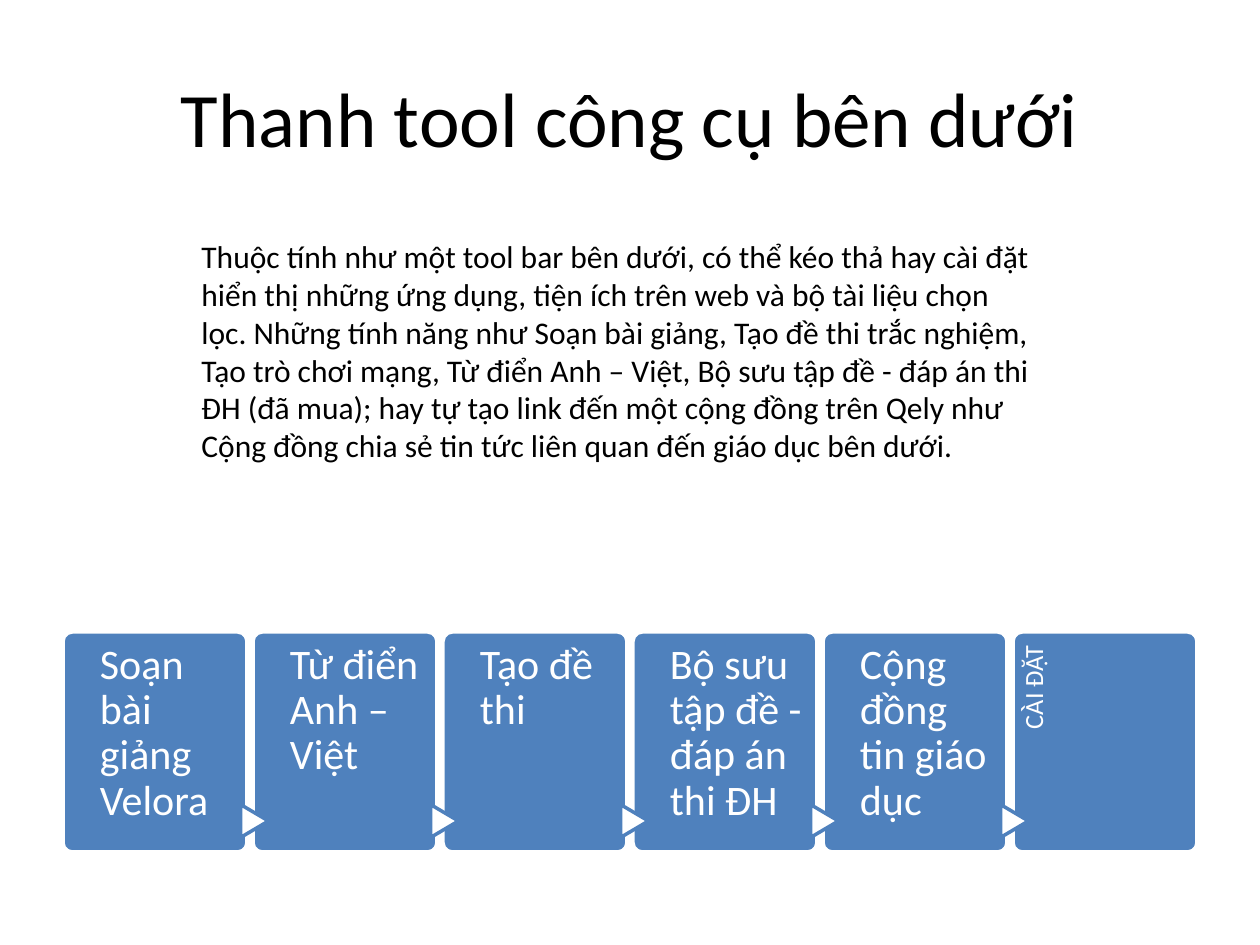
from dataclasses import dataclass

from pptx import Presentation
from pptx.dml.color import RGBColor as RGB
from pptx.enum.shapes import MSO_SHAPE as SHAPE
from pptx.enum.text import MSO_ANCHOR as ANCHOR, MSO_AUTO_SIZE as FIT, PP_ALIGN as ALIGN
from pptx.util import Pt


@dataclass(frozen=True)
class Theme:
    font: str = "Calibri"
    ink: RGB = RGB(0, 0, 0)
    paper: RGB = RGB(255, 255, 255)
    blue: RGB = RGB(0x4F, 0x81, 0xBD)
    title: int = 44
    step: int = 24
    body: int = 18
    label: int = 15
    line: int = 2


theme = Theme()
PX = 914400 / 126


def write(shape, text, size, color, pads=None, spacing=None, align=ALIGN.LEFT):
    """Fill a shape with one paragraph; pads are left, top, right, bottom in px."""
    frame = shape.text_frame
    frame.word_wrap = True
    if pads:
        (frame.margin_left, frame.margin_top,
         frame.margin_right, frame.margin_bottom) = [round(p * PX) for p in pads]
    para = frame.paragraphs[0]
    para.text = text
    para.alignment = align
    para.line_spacing = spacing
    para.font.name = theme.font
    para.font.size = Pt(size)
    para.font.color.rgb = color
    return frame


def draw(kind, box, fill, line):
    shape = slide.shapes.add_shape(kind, *[round(v * PX) for v in box])
    shape.shadow.inherit = False
    shape.fill.solid()
    shape.fill.fore_color.rgb = fill
    shape.line.color.rgb = line
    shape.line.width = Pt(theme.line)
    return shape


deck = Presentation()
deck.slide_width = round(1260 * PX)
deck.slide_height = round(945 * PX)
slide = deck.slides.add_slide(deck.slide_layouts[5])

# Title
title = slide.shapes.title
title.left, title.top, title.width, title.height = [
    round(v * PX) for v in (63, 38, 1134, 158)]
frame = write(title, "Thanh tool công cụ bên dưới", theme.title, theme.ink,
              align=ALIGN.CENTER)
frame.vertical_anchor = ANCHOR.MIDDLE

# Toolbar cards, each after the first joined by an arrow
steps = [
    "Soạn bài giảng Velora",
    "Từ điển Anh – Việt",
    "Tạo đề thi",
    "Bộ sưu tập đề - đáp án thi ĐH",
    "Cộng đồng tin giáo dục",
    "CÀI ĐẶT",
]
LEFT, TOP, WIDE, HIGH, PITCH = 63, 632, 184, 220, 190
for i, step in enumerate(steps):
    x = LEFT + i * PITCH
    card = draw(SHAPE.ROUNDED_RECTANGLE, (x, TOP, WIDE, HIGH), theme.blue, theme.paper)
    card.adjustments[0] = 0.05
    if i:
        arrow = draw(SHAPE.FLOWCHART_EXTRACT, (x - 15, TOP + 175, 33, 28),
                     theme.paper, theme.blue)
        arrow.rotation = 90
    if i < len(steps) - 1:
        box = slide.shapes.add_textbox(
            *[round(v * PX) for v in (x + 37, TOP, 137, HIGH)])
        write(box, step, theme.step, theme.paper, (0, 11, 0, 0), 0.9)
    else:
        box = slide.shapes.add_textbox(
            *[round(v * PX) for v in (x - 72, TOP + 72, 180, 37)])
        box.rotation = 270
        write(box, step, theme.label, theme.paper, (0, 8, 13, 0), 0.9, ALIGN.RIGHT)

# Description
note = slide.shapes.add_textbox(*[round(v * PX) for v in (189, 231, 861, 242)])
frame = write(
    note,
    "Thuộc tính như một tool bar bên dưới, có thể kéo thả hay cài đặt hiển thị "
    "những ứng dụng, tiện ích trên web và bộ tài liệu chọn lọc. Những tính năng "
    "như Soạn bài giảng, Tạo đề thi trắc nghiệm, Tạo trò chơi mạng, Từ điển "
    "Anh – Việt, Bộ sưu tập đề - đáp án thi ĐH (đã mua); hay tự tạo link đến một "
    "cộng đồng trên Qely như Cộng đồng chia sẻ tin tức liên quan đến giáo dục "
    "bên dưới.",
    theme.body, theme.ink)
frame.auto_size = FIT.SHAPE_TO_FIT_TEXT

deck.save("out.pptx")
